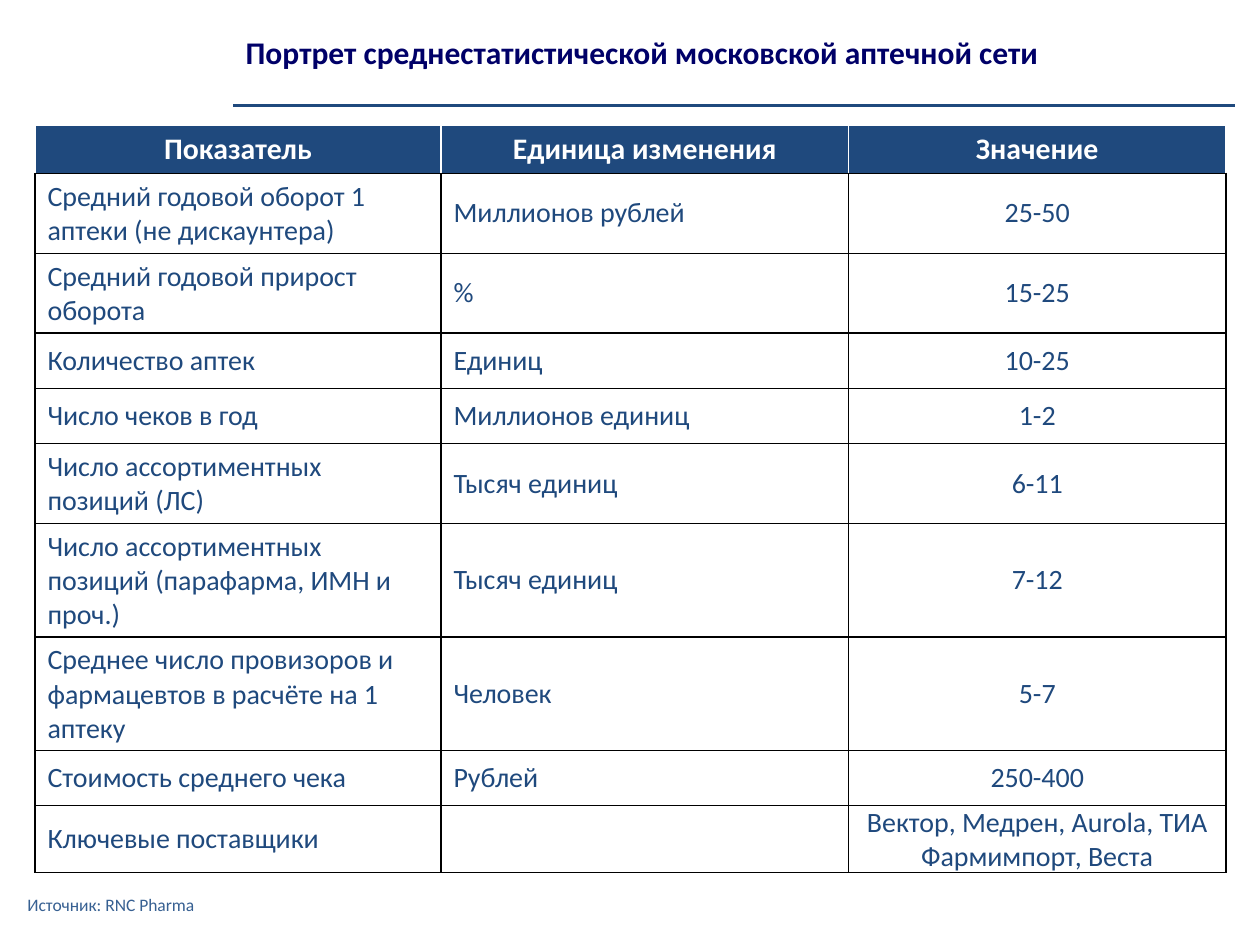
import pptx
import pptx.dml.color
import pptx.enum.shapes
import pptx.enum.text
import pptx.oxml
import pptx.oxml.ns
import pptx.util

Pt = pptx.util.Pt
RGB = pptx.dml.color.RGBColor
ALIGN = pptx.enum.text.PP_ALIGN
ANCHOR = pptx.enum.text.MSO_ANCHOR

NAVY = RGB(0x00, 0x00, 0x68)
BLUE = RGB(0x1F, 0x49, 0x7D)
STEEL = RGB(0x37, 0x60, 0x92)
WHITE = RGB(0xFF, 0xFF, 0xFF)
BLACK = RGB(0x00, 0x00, 0x00)

WIDTHS = [232, 233, 215.5]
HEAD_H, ROW_H = 19, 31.6
HEADS = ["Показатель", "Единица изменения", "Значение"]
ROWS = [
    ["Средний годовой оборот 1 аптеки (не дискаунтера)", "Миллионов рублей", "25-50"],
    ["Средний годовой прирост оборота", "%", "15-25"],
    ["Количество аптек", "Единиц", "10-25"],
    ["Число чеков в год", "Миллионов единиц", "1-2"],
    ["Число ассортиментных позиций (ЛС)", "Тысяч единиц", "6-11"],
    ["Число ассортиментных позиций (парафарма, ИМН и проч.)", "Тысяч единиц", "7-12"],
    ["Среднее число провизоров и фармацевтов в расчёте на 1 аптеку", "Человек", "5-7"],
    ["Стоимость среднего чека", "Рублей", "250-400"],
    ["Ключевые поставщики", "", "Вектор, Медрен, Aurola, ТИА Фармимпорт, Веста"],
]


def write(frame, text, size=16, color=BLUE, bold=False, align=ALIGN.LEFT):
    """Put one formatted paragraph into a text frame."""
    frame.text = text
    para = frame.paragraphs[0]
    para.alignment = align
    for font in [para.font] + [run.font for run in para.runs]:
        font.name, font.size, font.bold = "Calibri", Pt(size), bold
        font.color.rgb = color


def place(shape, left, top, width, height):
    """Move and size a shape in points."""
    shape.left, shape.top = Pt(left), Pt(top)
    shape.width, shape.height = Pt(width), Pt(height)


def title(slide, text):
    """Fill the title placeholder."""
    shape = slide.shapes.title
    place(shape, 133.2, 15, 516, 29)
    frame = shape.text_frame
    frame.word_wrap = True
    frame.vertical_anchor = ANCHOR.TOP
    write(frame, text, size=18, color=NAVY, bold=True)


def rule(slide):
    """Draw the line under the title."""
    line = slide.shapes.add_connector(
        pptx.enum.shapes.MSO_CONNECTOR.STRAIGHT, Pt(133.2), Pt(60.2), Pt(705.6), Pt(60.2))
    line.line.color.rgb = BLUE
    line.line.width = Pt(1.5)
    line._element.spPr.append(pptx.oxml.parse_xml(
        f'<a:effectLst {pptx.oxml.ns.nsdecls("a")}/>'))


def source(slide, text):
    """Add the source note at the foot."""
    box = slide.shapes.add_textbox(Pt(8.6), Pt(502.5), Pt(228), Pt(29))
    box.text_frame.word_wrap = True
    box.text_frame.vertical_anchor = ANCHOR.MIDDLE
    write(box.text_frame, text, size=10, color=STEEL)


def edge(cell, **sides):
    """Set the named cell borders, given in the order L, R, T, B."""
    props = cell._tc.get_or_add_tcPr()
    for spot, (side, color) in enumerate(sides.items()):
        props.insert(spot, pptx.oxml.parse_xml(
            f'<a:ln{side} {pptx.oxml.ns.nsdecls("a")} w="{Pt(1)}"><a:solidFill>'
            f'<a:srgbClr val="{color}"/></a:solidFill></a:ln{side}>'))


def style(cell, text, head, last):
    """Fill and format one table cell."""
    cell.vertical_anchor = ANCHOR.MIDDLE
    if last:
        cell.margin_left = cell.margin_right = cell.margin_top = cell.margin_bottom = 0
    align = ALIGN.CENTER if head or last else ALIGN.LEFT
    if head:
        cell.fill.solid()
        cell.fill.fore_color.rgb = BLUE
        write(cell.text_frame, text, size=17, color=WHITE, bold=True, align=align)
        edge(cell, L=WHITE, R=WHITE, B=BLACK)
    else:
        cell.fill.background()
        write(cell.text_frame, text, align=align)
        edge(cell, L=BLACK, R=BLACK, T=BLACK, B=BLACK)


def grid(slide):
    """Build the table of figures."""
    data = [HEADS] + ROWS
    height = HEAD_H + ROW_H * len(ROWS)
    table = slide.shapes.add_table(
        len(data), len(WIDTHS), Pt(20), Pt(71.5), Pt(sum(WIDTHS)), Pt(height)).table
    table.horz_banding = False
    for col, width in zip(table.columns, WIDTHS):
        col.width = Pt(width)
    for i, texts in enumerate(data):
        table.rows[i].height = Pt(ROW_H if i else HEAD_H)
        for j, text in enumerate(texts):
            style(table.cell(i, j), text, head=i == 0, last=j == len(WIDTHS) - 1)


def main():
    """Build and save the slide."""
    deck = pptx.Presentation()
    deck.slide_width, deck.slide_height = Pt(720), Pt(540)
    slide = deck.slides.add_slide(deck.slide_layouts[5])
    rule(slide)
    title(slide, "Портрет среднестатистической московской аптечной сети")
    source(slide, "Источник: RNC Pharma")
    grid(slide)
    deck.save("out.pptx")


if __name__ == "__main__":
    main()
